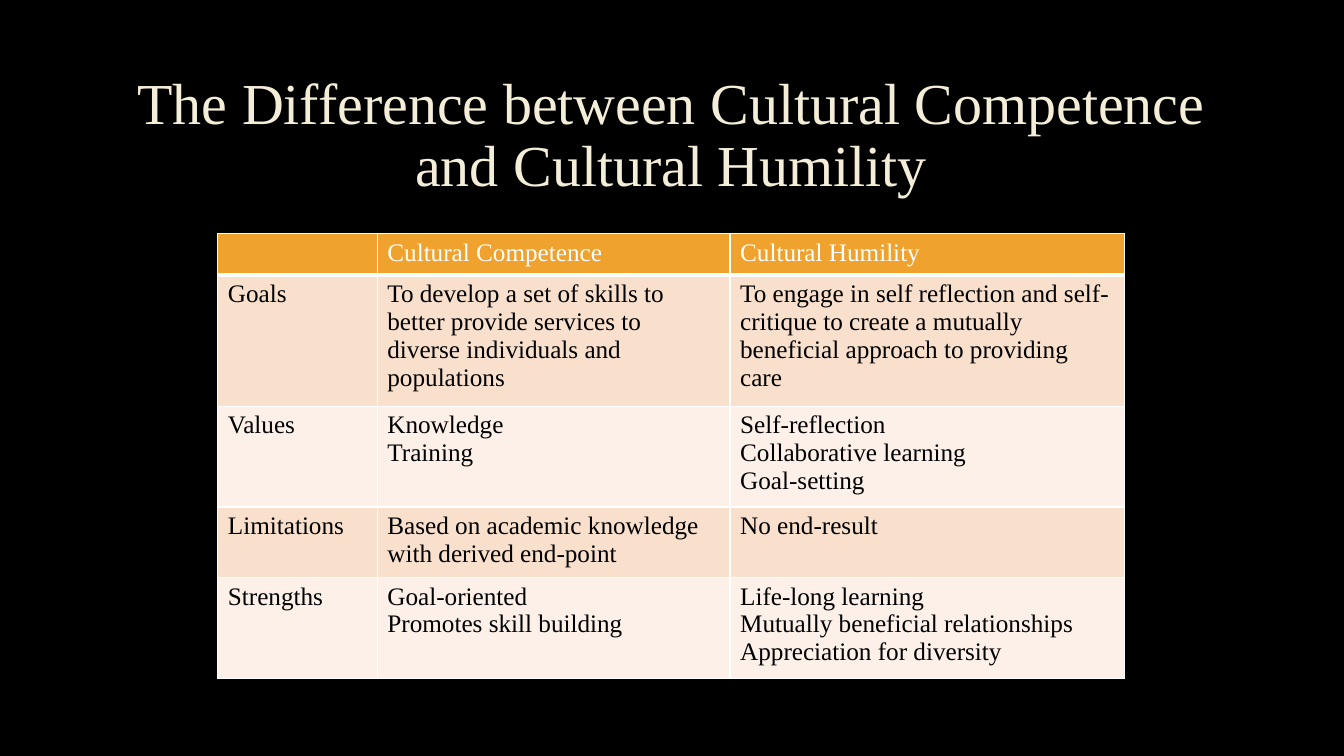
from lxml import etree
from pptx import Presentation
from pptx.dml.color import RGBColor
from pptx.enum.text import MSO_ANCHOR, PP_ALIGN
from pptx.oxml.ns import qn
from pptx.util import Cm, Pt

FONT = "Times New Roman"
ROWS = [
    ["", "Cultural Competence", "Cultural Humility"],
    ["Goals",
     "To develop a set of skills to better provide services to diverse individuals and populations",
     "To engage in self reflection and self-critique to create a mutually beneficial approach to providing care"],
    ["Values", "Knowledge\nTraining", "Self-reflection\nCollaborative learning\nGoal-setting"],
    ["Limitations", "Based on academic knowledge with derived end-point", "No end-result"],
    ["Strengths", "Goal-oriented\nPromotes skill building",
     "Life-long learning\nMutually beneficial relationships\nAppreciation for diversity"],
]
COLUMN_WIDTHS = [4.02, 8.89, 9.95]
ROW_HEIGHTS = [1.04, 3.08, 2.36, 1.67, 2.36]


def paint(color_format, color):
    """Set a fill's or font's colour from a hex string."""
    color_format.rgb = RGBColor.from_string(color)


def add_run(paragraph, text, size, color):
    run = paragraph.add_run()
    run.text = text
    run.font.name = FONT
    run.font.size = Pt(size)
    paint(run.font.color, color)


presentation = Presentation()
presentation.slide_width = Cm(33.87)
presentation.slide_height = Cm(19.05)
slide = presentation.slides.add_slide(presentation.slide_layouts[6])
slide.background.fill.solid()
paint(slide.background.fill.fore_color, "000000")

# Title
title = slide.shapes.add_textbox(Cm(2.54), Cm(1.7), Cm(28.75), Cm(3.5))
title.text_frame.word_wrap = True
title.text_frame.vertical_anchor = MSO_ANCHOR.MIDDLE
paragraph = title.text_frame.paragraphs[0]
paragraph.alignment = PP_ALIGN.CENTER
paragraph.line_spacing = 0.9
add_run(paragraph, "The Difference between Cultural Competence and Cultural Humility", 41.4, "F4EDD8")

# Comparison table
table = slide.shapes.add_table(
    len(ROWS), len(COLUMN_WIDTHS), Cm(5.49), Cm(5.89),
    Cm(sum(COLUMN_WIDTHS)), Cm(sum(ROW_HEIGHTS))).table
for column, width in zip(table.columns, COLUMN_WIDTHS):
    column.width = Cm(width)
for row, height in zip(table.rows, ROW_HEIGHTS):
    row.height = Cm(height)

for row_index, texts in enumerate(ROWS):
    is_header = row_index == 0
    band_color = "F0A22E" if is_header else ("FCF0E8", "F9E0CD")[row_index % 2]
    text_color = "FFFFFF" if is_header else "000000"
    for column_index, text in enumerate(texts):
        cell = table.cell(row_index, column_index)
        properties = cell._tc.get_or_add_tcPr()
        for side in ("lnL", "lnR", "lnT", "lnB"):
            width = Pt(3) if is_header and side == "lnB" else Pt(1)
            border = etree.SubElement(properties, qn(f"a:{side}"), w=str(width))
            fill = etree.SubElement(border, qn("a:solidFill"))
            etree.SubElement(fill, qn("a:srgbClr"), val="FFFFFF")
        cell.fill.solid()
        paint(cell.fill.fore_color, band_color)
        frame = cell.text_frame
        for line_index, line in enumerate(text.splitlines()):
            paragraph = frame.add_paragraph() if line_index else frame.paragraphs[0]
            add_run(paragraph, line, 18, text_color)

presentation.save("out.pptx")
